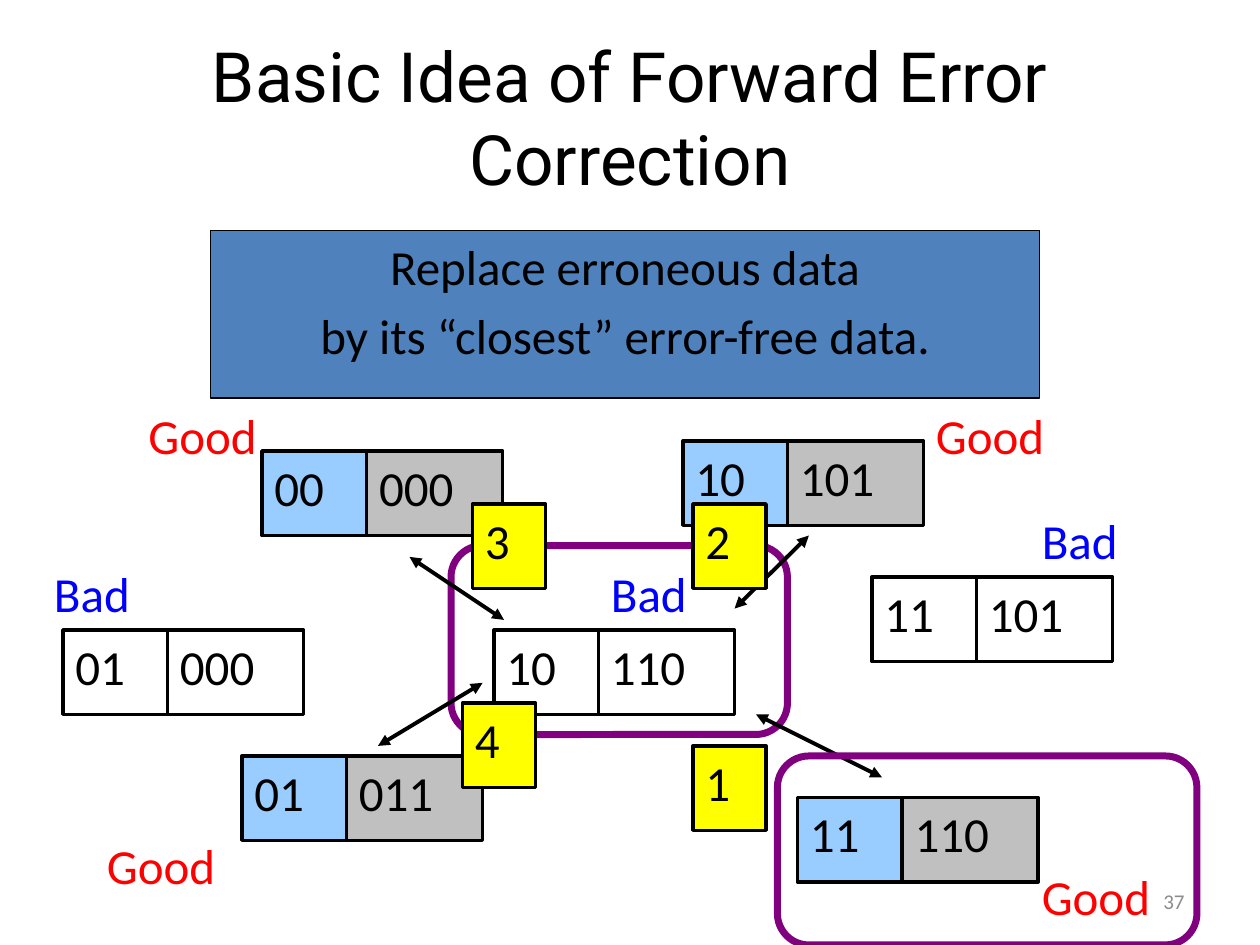
import pptx
import pptx.util
import pptx.dml.color
import pptx.enum.shapes
import pptx.enum.text
import pptx.oxml.ns
import lxml.etree

Inches = pptx.util.Inches
Pt = pptx.util.Pt
SHAPE = pptx.enum.shapes.MSO_SHAPE
ALIGN = pptx.enum.text.PP_ALIGN
ANCHOR = pptx.enum.text.MSO_ANCHOR
COLORS = {
    "black": "000000", "banner": "4F81BD", "data": "99CCFF", "check": "C0C0C0",
    "good": "FF0000", "bad": "0000FF", "distance": "FFFF00",
    "highlight": "800080", "number": "8C8C8C",
}

deck = pptx.Presentation()
deck.slide_width, deck.slide_height = Inches(10), Inches(7.5)
slide = deck.slides.add_slide(deck.slide_layouts[6])


def color(name):
    return pptx.dml.color.RGBColor.from_string(COLORS[name])


def add_box(box, lines=(), fill=None, line=None, width=2, preset=SHAPE.RECTANGLE,
            ink="black", size=28, font="Calibri", align=ALIGN.LEFT, anchor=ANCHOR.TOP):
    place = [Inches(value) for value in box]
    if line:
        part = slide.shapes.add_shape(preset, *place)
        part.shadow.inherit = False
        part.line.color.rgb = color(line)
        part.line.width = Pt(width)
        if fill:
            part.fill.solid()
            part.fill.fore_color.rgb = color(fill)
        else:
            part.fill.background()
    else:
        part = slide.shapes.add_textbox(*place)
    frame = part.text_frame
    frame.word_wrap = True
    frame.vertical_anchor = anchor
    for index, text in enumerate(lines):
        paragraph = frame.add_paragraph() if index else frame.paragraphs[0]
        paragraph.text = text
        paragraph.alignment = align
        paragraph.space_before = Pt(5.6 if index else 0)
        paragraph.font.name = font
        paragraph.font.size = Pt(size)
        paragraph.font.color.rgb = color(ink)


add_box((0.5, 0.3, 9, 1.25), ["Basic Idea of Forward Error Correction"],
        size=39.6, font="Roboto", align=ALIGN.CENTER, anchor=ANCHOR.MIDDLE)
add_box((1.67, 1.83, 6.58, 1.33),
        ["Replace erroneous data", "by its “closest” error-free data."],
        fill="banner", line="black", width=0.75, align=ALIGN.CENTER)

codewords = [
    (2.08, 3.58, "00", "000", True),
    (1.92, 6, "01", "011", True),
    (5.42, 3.5, "10", "101", True),
    (6.33, 6.33, "11", "110", True),
    (0.5, 5, "01", "000", False),
    (6.92, 4.58, "11", "101", False),
    (3.92, 5, "10", "110", False),
]
for left, top, data, check, valid in codewords:
    add_box((left, top, 0.83, 0.67), [data], "data" if valid else None, "black")
    add_box((left + 0.83, top, 1.08, 0.67), [check], "check" if valid else None, "black")

verdicts = [
    ("Good", 7.33, 3.17), ("Good", 0.75, 6.58), ("Good", 8.17, 6.83), ("Good", 1.08, 3.17),
    ("Bad", 8.17, 4), ("Bad", 0.33, 4.42), ("Bad", 4.75, 4.42),
]
for verdict, left, top in verdicts:
    add_box((left, top, 1.42, 0.67), [verdict], ink=verdict.lower())

add_box((3.58, 4.33, 2.67, 1.5), line="highlight", width=4, preset=SHAPE.ROUNDED_RECTANGLE)

paths = [
    (5.83, 4.83, 6.42, 4.25), (3.25, 4.42, 4, 4.92),
    (6, 5.67, 7, 6.17), (3, 5.92, 3.83, 5.42),
]
for ends in paths:
    arrow = slide.shapes.add_connector(
        pptx.enum.shapes.MSO_CONNECTOR.STRAIGHT, *[Inches(value) for value in ends])
    arrow.line.color.rgb = color("black")
    arrow.line.width = Pt(2.25)
    outline = arrow.line._get_or_add_ln()
    for end in ("a:headEnd", "a:tailEnd"):
        lxml.etree.SubElement(outline, pptx.oxml.ns.qn(end), type="triangle")
    lxml.etree.SubElement(arrow._element.spPr, pptx.oxml.ns.qn("a:effectLst"))

distances = [("3", 3.75, 4), ("4", 3.67, 5.58), ("2", 5.5, 4), ("1", 5.5, 5.92)]
for distance, left, top in distances:
    add_box((left, top, 0.58, 0.67), [distance], "distance", "black")

add_box((6.17, 6, 3.33, 1.5), line="highlight", width=4, preset=SHAPE.ROUNDED_RECTANGLE)
add_box((7.17, 6.95, 2.33, 0.4), ["37"], ink="number", size=12,
        align=ALIGN.RIGHT, anchor=ANCHOR.MIDDLE)

deck.save("out.pptx")
